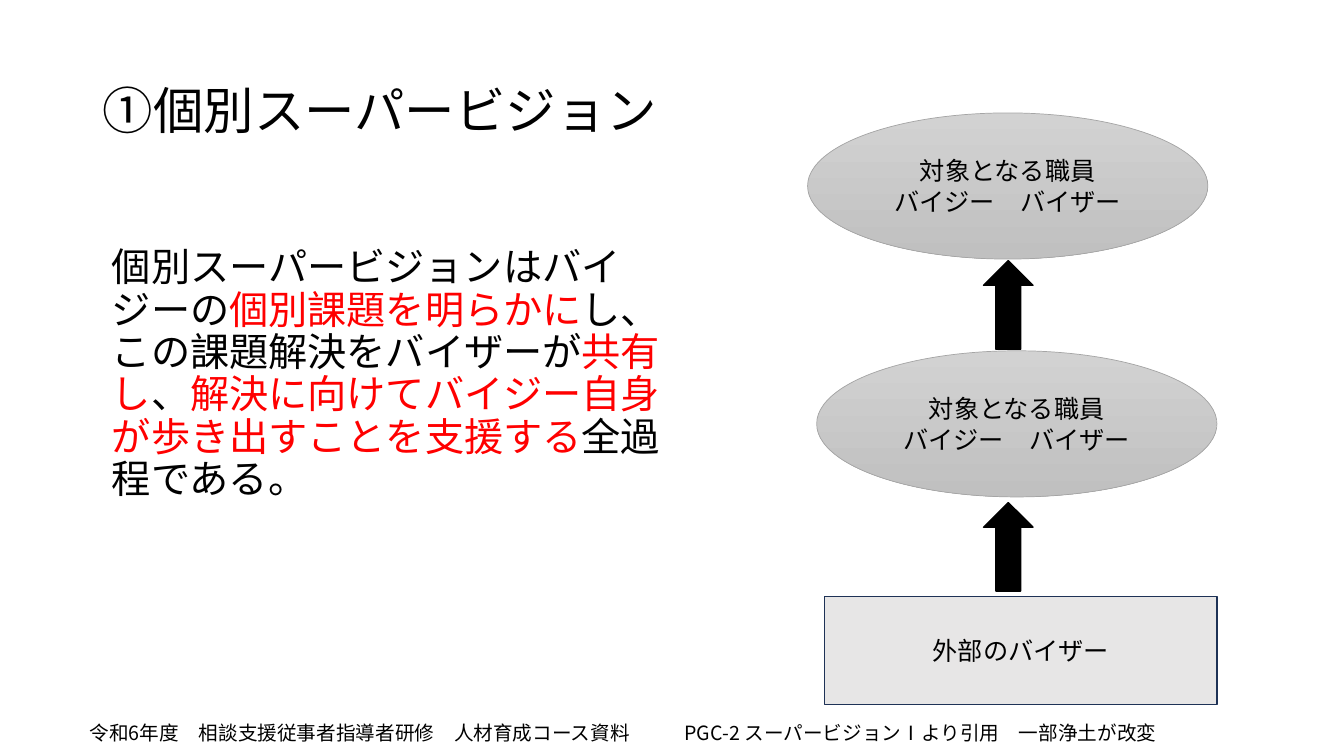
import pptx
import pptx.util
import pptx.dml.color
import pptx.enum.shapes
import pptx.enum.text
import lxml.etree
from pptx.util import Inches

FONT = "Noto Sans CJK JP"
BLACK, RED = "000000", "FF0000"
SHAPE = pptx.enum.shapes.MSO_SHAPE
ALIGN = pptx.enum.text.PP_ALIGN
ANCHOR = pptx.enum.text.MSO_ANCHOR


def rgb(value):
    return pptx.dml.color.RGBColor.from_string(value)


def add_run(p, text, size, color=BLACK):
    """Append a run whose Latin and East Asian typefaces are both FONT."""
    r = p.add_run()
    r.text = text
    r.font.size = pptx.util.Pt(size)
    r.font.color.rgb = rgb(color)
    r.font.name = FONT
    ea = lxml.etree.SubElement(r.font._element, pptx.oxml.ns.qn("a:ea"))
    ea.set("typeface", FONT)


prs = pptx.Presentation()
prs.slide_width, prs.slide_height = Inches(13.33), Inches(7.5)
s = prs.slides.add_slide(prs.slide_layouts[1])

# Title and body
title, body = s.placeholders
title.left, title.top = Inches(0.92), Inches(0.4)
title.width, title.height = Inches(11.5), Inches(1.45)
body.left, body.top = Inches(1.01), Inches(2.41)
body.width, body.height = Inches(5.9), Inches(4.05)
for sp, anchor in ((title, ANCHOR.MIDDLE), (body, ANCHOR.TOP)):
    tf = sp.text_frame
    tf.word_wrap = True
    tf.auto_size = pptx.enum.text.MSO_AUTO_SIZE.NONE
    tf.vertical_anchor = anchor
    p = tf.paragraphs[0]
    p.alignment = ALIGN.LEFT
    p.line_spacing = 0.9
    p.space_before = pptx.util.Pt(0)

add_run(title.text_frame.paragraphs[0], "①個別スーパービジョン", 36)

p = body.text_frame.paragraphs[0]
pPr = p._p.get_or_add_pPr()
pPr.set("marL", "0")
pPr.set("indent", "0")
lxml.etree.SubElement(pPr, pptx.oxml.ns.qn("a:buNone"))
for text, color in (
    ("個別スーパービジョンはバイジーの", BLACK),
    ("個別課題を明らかに", RED),
    ("し、この課題解決をバイザーが", BLACK),
    ("共有し", RED),
    ("、", BLACK),
    ("解決に向けてバイジー自身が歩き出すことを支援する", RED),
    ("全過程である。", BLACK),
):
    add_run(p, text, 28, color)

# Supervision chain, from the staff at the top to the outside supervisor
staff = ("対象となる職員", "バイジー　バイザー")
for kind, x, y, w, h, lines in (
    (SHAPE.OVAL, 8.01, 1.12, 3.97, 1.45, staff),
    (SHAPE.OVAL, 8.1, 3.48, 3.97, 1.45, staff),
    (SHAPE.RECTANGLE, 8.18, 5.92, 3.89, 1.07, ("外部のバイザー",)),
):
    sp = s.shapes.add_shape(kind, Inches(x), Inches(y), Inches(w), Inches(h))
    sp.shadow.inherit = False
    if kind == SHAPE.OVAL:
        sp.fill.gradient()
        sp.fill.gradient_angle = 270
        for stop, color in zip(sp.fill.gradient_stops, ("D2D2D2", "C0C0C0")):
            stop.color.rgb = rgb(color)
        sp.line.color.rgb = rgb("A5A5A5")
        sp.line.width = pptx.util.Pt(0.5)
    else:
        sp.fill.solid()
        sp.fill.fore_color.rgb = rgb("E7E6E6")
        sp.line.color.rgb = rgb("1E3256")
        sp.line.width = pptx.util.Pt(1)
    tf = sp.text_frame
    tf.word_wrap = True
    tf.vertical_anchor = ANCHOR.MIDDLE
    for i, line in enumerate(lines):
        p = tf.add_paragraph() if i else tf.paragraphs[0]
        p.alignment = ALIGN.CENTER
        add_run(p, line, 18)

for y in (2.78, 5.18):
    sp = s.shapes.add_shape(SHAPE.RIGHT_ARROW, Inches(9.56), Inches(y), Inches(0.88), Inches(0.49))
    sp.rotation = 270
    sp.shadow.inherit = False
    sp.fill.solid()
    sp.fill.fore_color.rgb = rgb(BLACK)
    sp.line.color.rgb = rgb(BLACK)
    sp.line.width = pptx.util.Pt(1)

# Source note, with a tab stop before the course code
note = s.shapes.add_textbox(Inches(0.79), Inches(7.1), Inches(11.19), Inches(0.34))
note.text_frame.word_wrap = True
p = note.text_frame.paragraphs[0]
tabs = lxml.etree.SubElement(p._p.get_or_add_pPr(), pptx.oxml.ns.qn("a:tabLst"))
lxml.etree.SubElement(tabs, pptx.oxml.ns.qn("a:tab"), pos=str(Inches(5.9)), algn="l")
add_run(
    p,
    "令和6年度　相談支援従事者指導者研修　人材育成コース資料\tPGC-2 スーパービジョンⅠより引用　一部浄土が改変",
    14,
)

prs.save("out.pptx")
